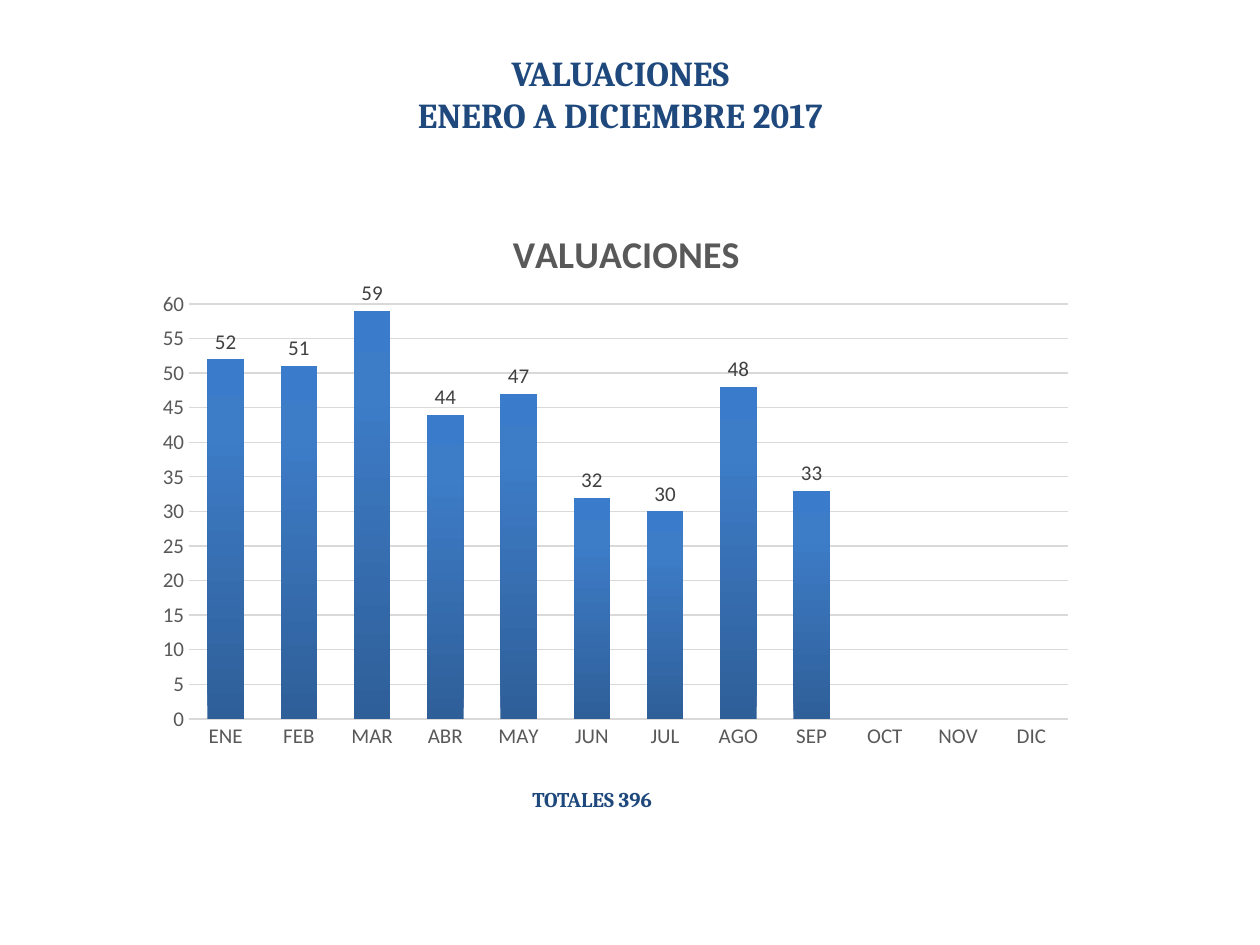
import copy
from dataclasses import dataclass

import pptx
import pptx.chart.data
import pptx.dml.color
import pptx.enum.chart
import pptx.enum.text
import pptx.oxml
import pptx.oxml.ns
import pptx.util

EMU_PER_PX = 914400 / 126
MONTHS = ["ENE", "FEB", "MAR", "ABR", "MAY", "JUN",
          "JUL", "AGO", "SEP", "OCT", "NOV", "DIC"]
VALUATIONS = [52, 51, 59, 44, 47, 32, 30, 48, 33, None, None, None]


@dataclass(frozen=True)
class Theme:
    heading_font: str = "Cambria"
    chart_font: str = "Calibri"
    navy: str = "1F497D"
    gray: str = "595959"
    label: str = "404040"
    grid: str = "D9D9D9"
    bar_stops: tuple = ((0, "2F5F99"), (0.8, "3D7CC7"), (1, "3A7CCB"))
    heading_size: float = 20
    chart_title_size: float = 21.6
    body_size: float = 12


def px(length):
    return pptx.util.Emu(round(length * EMU_PER_PX))


def rgb(color):
    return pptx.dml.color.RGBColor.from_string(color)


def style_font(font, name, size, color, bold=False):
    font.name = name
    font.size = pptx.util.Pt(size)
    font.color.rgb = rgb(color)
    font.bold = bold


def write_text(text_frame, text, align=None, **font_format):
    for index, line in enumerate(text.split("\n")):
        paragraph = text_frame.paragraphs[0] if index == 0 else text_frame.add_paragraph()
        paragraph.alignment = align
        run = paragraph.add_run()
        run.text = line
        style_font(run.font, **font_format)


def manual_layout(frame, **places):
    x, y, width, height = frame
    shares = {"x": (places["left"] - x) / width, "y": (places["top"] - y) / height}
    target = ""
    if "width" in places:
        target = '<c:layoutTarget val="inner"/>'
        shares["w"] = places["width"] / width
        shares["h"] = places["height"] / height
    modes = '<c:xMode val="edge"/><c:yMode val="edge"/>'
    values = "".join(f'<c:{key} val="{share:.4f}"/>' for key, share in shares.items())
    return pptx.oxml.parse_xml(
        f'<c:layout {pptx.oxml.ns.nsdecls("c")}><c:manualLayout>'
        f"{target}{modes}{values}</c:manualLayout></c:layout>")


def replace_layout(element, layout, before):
    for old in element.findall(pptx.oxml.ns.qn("c:layout")):
        element.remove(old)
    element.insert(before, layout)


class SlideBuilder:
    def __init__(self, slide, theme):
        self.slide = slide
        self.theme = theme

    def text(self, box, text, size, wrap=True, align=None):
        shape = self.slide.shapes.add_textbox(*map(px, box))
        shape.text_frame.word_wrap = wrap
        write_text(shape.text_frame, text, align=align, name=self.theme.heading_font,
                   size=size, color=self.theme.navy, bold=True)

    def column_chart(self, frame, plot, title, title_place, categories, values):
        theme = self.theme
        data = pptx.chart.data.CategoryChartData()
        data.categories = categories
        data.add_series("Series 1", values)
        chart = self.slide.shapes.add_chart(
            pptx.enum.chart.XL_CHART_TYPE.COLUMN_CLUSTERED, *map(px, frame), data).chart
        chart.has_legend = False
        style_font(chart.font, theme.chart_font, theme.body_size, theme.gray)

        chart.has_title = True
        write_text(chart.chart_title.text_frame, title, name=theme.chart_font,
                   size=theme.chart_title_size, color=theme.gray, bold=True)
        chart.chart_title.include_in_layout = False
        replace_layout(chart.chart_title._element, manual_layout(frame, **title_place), 1)
        plot_area = chart._chartSpace.chart.plotArea
        replace_layout(plot_area, manual_layout(frame, **plot), 0)

        self.style_axes(chart)
        self.style_bars(chart.plots[0])

    def style_axes(self, chart):
        theme = self.theme
        for axis in (chart.category_axis, chart.value_axis):
            axis.major_tick_mark = pptx.enum.chart.XL_TICK_MARK.NONE
            axis.minor_tick_mark = pptx.enum.chart.XL_TICK_MARK.NONE
            style_font(axis.tick_labels.font, theme.chart_font, theme.body_size, theme.gray)
        chart.value_axis.minimum_scale = 0
        chart.value_axis.maximum_scale = 60
        chart.value_axis.major_unit = 5
        chart.value_axis.format.line.fill.background()
        lines = ((chart.category_axis.format.line, 1),
                 (chart.value_axis.major_gridlines.format.line, 0.75))
        for line, width in lines:
            line.color.rgb = rgb(theme.grid)
            line.width = pptx.util.Pt(width)

    def style_bars(self, plot):
        theme = self.theme
        plot.gap_width = 100
        plot.overlap = -24
        plot.vary_by_categories = False
        series = plot.series[0]
        fill = series.format.fill
        fill.gradient()
        fill.gradient_angle = 90
        stop_list = series._element.find(".//" + pptx.oxml.ns.qn("a:gsLst"))
        stop_list.append(copy.deepcopy(stop_list[-1]))
        for stop, (position, color) in zip(fill.gradient_stops, theme.bar_stops):
            stop.position = position
            stop.color.rgb = rgb(color)
        labels = series.data_labels
        labels.show_value = True
        labels.position = pptx.enum.chart.XL_LABEL_POSITION.OUTSIDE_END
        style_font(labels.font, theme.chart_font, theme.body_size, theme.label)


def main():
    presentation = pptx.Presentation()
    presentation.slide_width = px(1260)
    presentation.slide_height = px(945)
    theme = Theme()
    builder = SlideBuilder(
        presentation.slides.add_slide(presentation.slide_layouts[6]), theme)
    builder.text((520, 780, 198, 38), "TOTALES 396", theme.body_size)
    builder.text((393, 45, 455, 97), "VALUACIONES\nENERO A DICIEMBRE 2017",
                 theme.heading_size, wrap=False, align=pptx.enum.text.PP_ALIGN.CENTER)
    builder.column_chart(
        frame=(144, 195, 942, 566),
        plot={"left": 189, "top": 304, "width": 879, "height": 415},
        title="VALUACIONES", title_place={"left": 506, "top": 220},
        categories=MONTHS, values=VALUATIONS)
    presentation.save("out.pptx")


if __name__ == "__main__":
    main()
